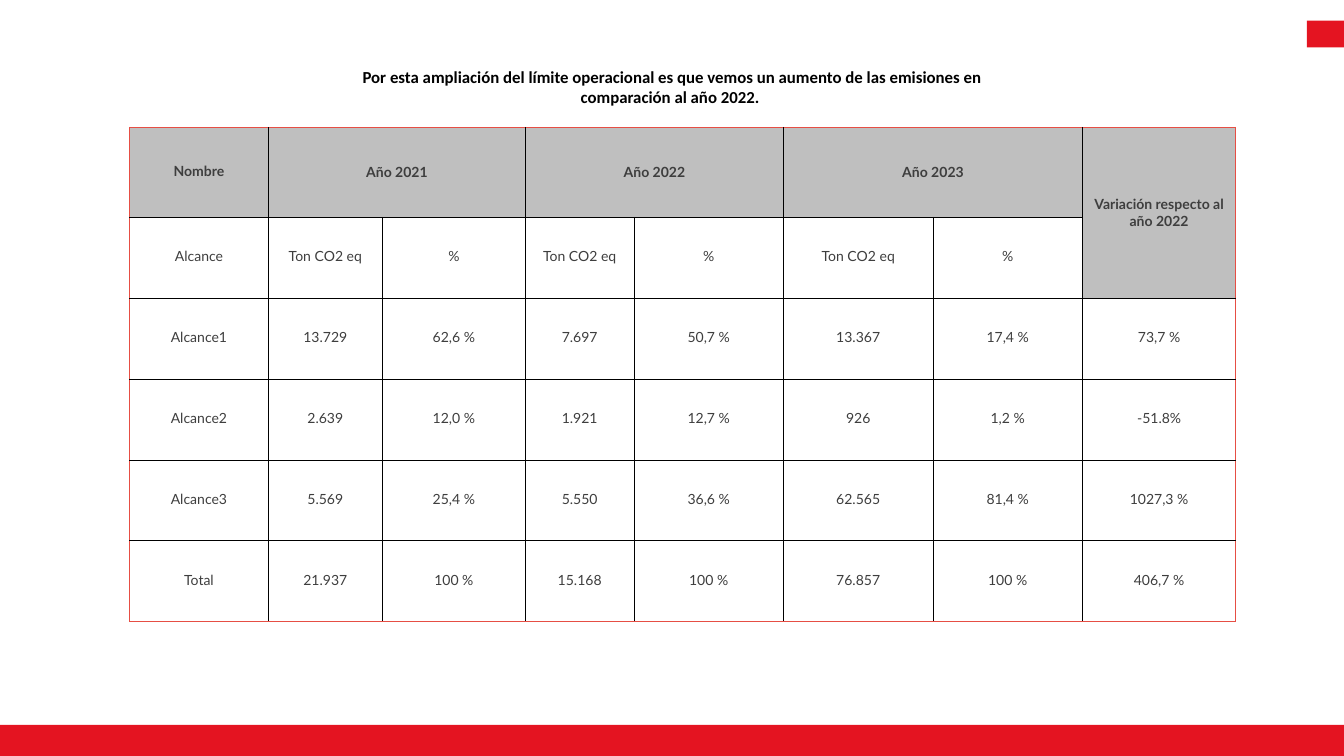
from lxml.etree import SubElement
from pptx import Presentation
from pptx.dml.color import RGBColor
from pptx.enum.shapes import MSO_SHAPE
from pptx.enum.text import MSO_ANCHOR, MSO_AUTO_SIZE, PP_ALIGN
from pptx.oxml.ns import qn
from pptx.util import Pt

BRAND_RED = RGBColor(0xE4, 0x14, 0x21)
EDGE_RED = RGBColor(0xE6, 0x4E, 0x44)
BLACK = RGBColor(0, 0, 0)
WHITE = RGBColor(0xFF, 0xFF, 0xFF)
HEADER_GREY = RGBColor(0xBF, 0xBF, 0xBF)
TEXT_GREY = RGBColor(0x3E, 0x3E, 0x3E)

SLIDE_SIZE = (1920, 1080)
BARS = [(1867, 29.5, 53, 38.2), (-3, 1035.4, 1926, 44.6)]

TITLE = ("Por esta ampliación del límite operacional es que vemos un aumento "
         "de las emisiones en comparación al año 2022. ")
TITLE_BOX = (480, 91.5, 960, 65.5)

# None marks a cell covered by its merged neighbour.
ROWS = [
    ["Nombre", "Año 2021", None, "Año 2022", None, "Año 2023", None,
     "Variación respecto al año 2022"],
    ["Alcance"] + ["Ton CO2 eq", "%"] * 3 + [None],
    ["Alcance1", "13.729", "62,6 %", "7.697", "50,7 %", "13.367", "17,4 %", "73,7 %"],
    ["Alcance2", "2.639", "12,0 %", "1.921", "12,7 %", "926", "1,2 %", "-51.8%"],
    ["Alcance3", "5.569", "25,4 %", "5.550", "36,6 %", "62.565", "81,4 %", "1027,3 %"],
    ["Total", "21.937", "100 %", "15.168", "100 %", "76.857", "100 %", "406,7 %"],
]
MERGES = [((0, 1), (0, 2)), ((0, 3), (0, 4)), ((0, 5), (0, 6)), ((0, 7), (1, 7))]
TABLE_LEFT, TABLE_TOP = 185, 181.5
COLUMN_WIDTHS = [198.5, 162.7, 204.5, 155, 213.6, 213.6, 213.6, 219]
ROW_HEIGHTS = [128.3] + [115.6] * 5
CELL_MARGIN = 4.5


def points(values):
    return [Pt(value) for value in values]


def add_span(para, text, font_name, size, color, bold):
    span = para.add_run()
    span.text = text
    span.font.name = font_name
    span.font.size = Pt(size)
    span.font.color.rgb = color
    span.font.bold = bold


def set_borders(cell, row, column):
    """Red on the outer edge of the table, thin black inside."""
    outer = {"L": column == 0, "R": column == len(COLUMN_WIDTHS) - 1,
             "T": row == 0, "B": row == len(ROWS) - 1}
    properties = cell._tc.get_or_add_tcPr()
    for side, is_outer in outer.items():
        width, color = (1, EDGE_RED) if is_outer else (0.25, BLACK)
        line = SubElement(properties, qn(f"a:ln{side}"), w=str(Pt(width)))
        fill = SubElement(line, qn("a:solidFill"))
        SubElement(fill, qn("a:srgbClr"), val=str(color))


def format_cell(cell, row, column, text):
    is_header = row == 0 or (row == 1 and text is None)
    set_borders(cell, row, column)
    cell.fill.solid()
    cell.fill.fore_color.rgb = HEADER_GREY if is_header else WHITE
    if text is None:
        return
    cell.vertical_anchor = MSO_ANCHOR.MIDDLE
    cell.margin_left = cell.margin_right = Pt(CELL_MARGIN)
    cell.margin_top = cell.margin_bottom = Pt(CELL_MARGIN)
    para = cell.text_frame.paragraphs[0]
    para.alignment = PP_ALIGN.CENTER
    if not is_header:
        para.line_spacing = 0.8
    elif column == 0:
        para.line_spacing = 0.9
    add_span(para, text, "Lato", 20, TEXT_GREY, is_header)


def add_emissions_table(page):
    frame = page.shapes.add_table(
        len(ROWS), len(COLUMN_WIDTHS),
        *points((TABLE_LEFT, TABLE_TOP, sum(COLUMN_WIDTHS), sum(ROW_HEIGHTS))))
    table = frame.table
    table.first_row = table.horz_banding = False
    for column, width in zip(table.columns, COLUMN_WIDTHS):
        column.width = Pt(width)
    for row, height in zip(table.rows, ROW_HEIGHTS):
        row.height = Pt(height)
    for first, last in MERGES:
        table.cell(*first).merge(table.cell(*last))
    for row, texts in enumerate(ROWS):
        for column, text in enumerate(texts):
            format_cell(table.cell(row, column), row, column, text)


def add_title(page):
    box = page.shapes.title
    box.left, box.top, box.width, box.height = points(TITLE_BOX)
    frame = box.text_frame
    frame.word_wrap = True
    frame.auto_size = MSO_AUTO_SIZE.NONE
    frame.vertical_anchor = MSO_ANCHOR.TOP
    para = frame.paragraphs[0]
    para.alignment = PP_ALIGN.CENTER
    add_span(para, TITLE, "Calibri", 24, BLACK, True)


def main():
    deck = Presentation()
    deck.slide_width, deck.slide_height = points(SLIDE_SIZE)
    page = deck.slides.add_slide(deck.slide_layouts[5])
    for bar in BARS:
        shape = page.shapes.add_shape(MSO_SHAPE.RECTANGLE, *points(bar))
        shape.shadow.inherit = False
        shape.fill.solid()
        shape.fill.fore_color.rgb = BRAND_RED
        shape.line.fill.background()
    add_emissions_table(page)
    add_title(page)
    deck.save("out.pptx")


if __name__ == "__main__":
    main()
